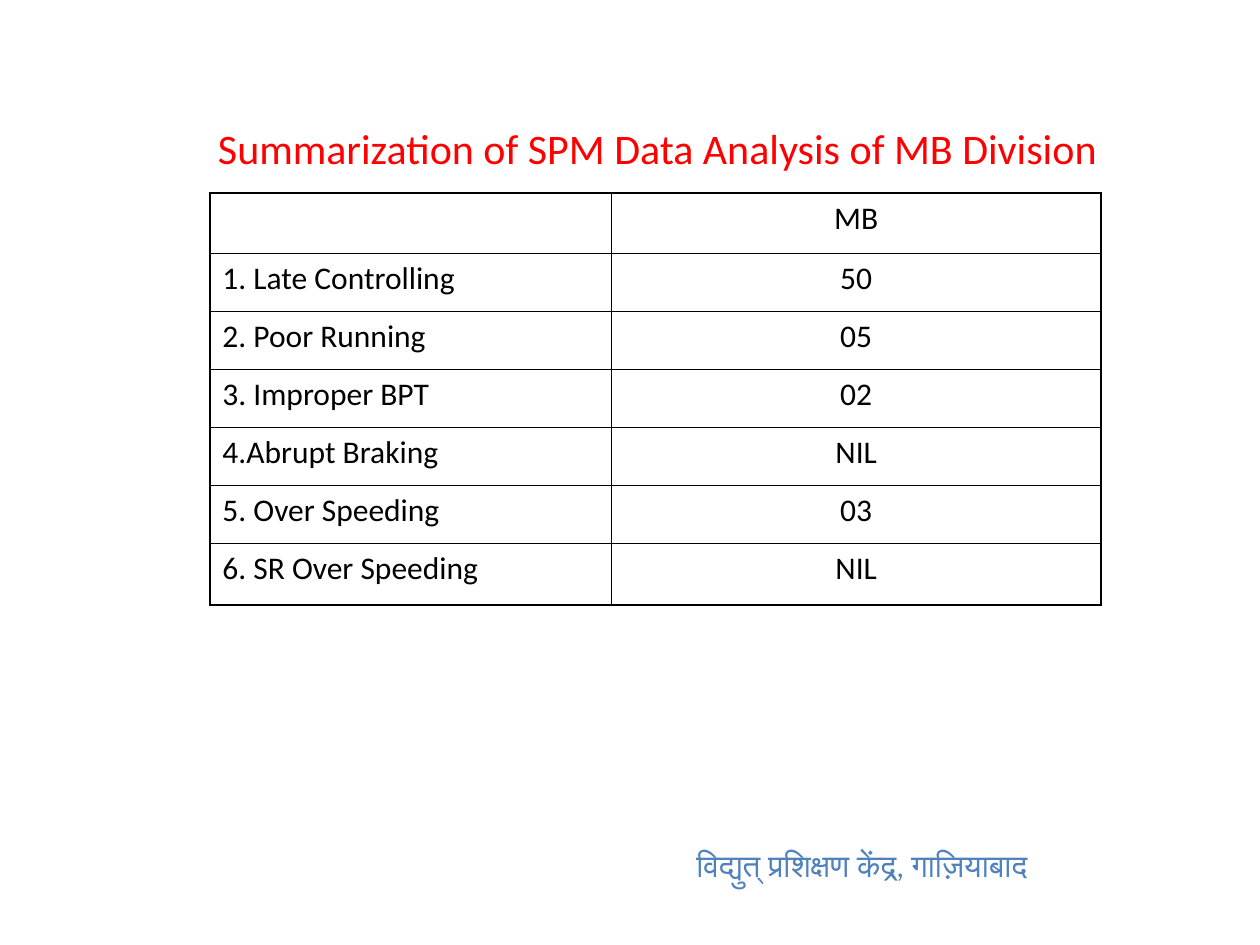
from dataclasses import dataclass

from lxml.etree import SubElement
from pptx import Presentation
from pptx.dml.color import RGBColor
from pptx.enum.text import MSO_ANCHOR, MSO_AUTO_SIZE, PP_ALIGN
from pptx.oxml.ns import qn
from pptx.util import Cm, Pt


@dataclass(frozen=True)
class Theme:
    font: str = "Calibri"
    title_size: Pt = Pt(24)
    body_size: Pt = Pt(18)
    title: RGBColor = RGBColor(0xFF, 0x00, 0x00)
    body: RGBColor = RGBColor(0x00, 0x00, 0x00)
    footer: RGBColor = RGBColor(0x4F, 0x81, 0xBD)
    border: str = "000000"
    border_width: Pt = Pt(1)


THEME = Theme()


def format_paragraph(paragraph, size, color, alignment=PP_ALIGN.LEFT):
    paragraph.alignment = alignment
    paragraph.font.name = THEME.font
    paragraph.font.size = size
    paragraph.font.color.rgb = color


def outline_cell(cell):
    """Draw all four borders; call before any fill is set, as borders come first."""
    properties = cell._tc.get_or_add_tcPr()
    for side in ("a:lnL", "a:lnR", "a:lnT", "a:lnB"):
        line = SubElement(properties, qn(side), w=str(THEME.border_width))
        fill = SubElement(line, qn("a:solidFill"))
        SubElement(fill, qn("a:srgbClr"), val=THEME.border)


presentation = Presentation()
presentation.slide_width = Cm(25.4)
presentation.slide_height = Cm(19.05)
slide = presentation.slides.add_slide(presentation.slide_layouts[5])

# Title
title = slide.shapes.title
title.left, title.top, title.width, title.height = Cm(4.14), Cm(2.34), Cm(18.6), Cm(1.27)
title.text_frame.text = "Summarization of SPM Data Analysis of MB Division"
title.text_frame.auto_size = MSO_AUTO_SIZE.NONE
title.text_frame.vertical_anchor = MSO_ANCHOR.TOP
format_paragraph(title.text_frame.paragraphs[0], THEME.title_size, THEME.title)

# Summary table
findings = [
    ("", "MB"),
    ("1. Late Controlling", "50"),
    ("2. Poor Running", "05"),
    ("3. Improper BPT", "02"),
    ("4.Abrupt Braking", "NIL"),
    ("5. Over Speeding", "03"),
    ("6. SR Over Speeding", "NIL"),
]
column_widths = [Cm(8.1), Cm(9.86)]
row_heights = [Cm(1.22)] + [Cm(1.17)] * 5 + [Cm(1.24)]
alignments = [PP_ALIGN.LEFT, PP_ALIGN.CENTER]

summary = slide.shapes.add_table(
    len(findings), len(column_widths), Cm(4.23), Cm(3.89), sum(column_widths), sum(row_heights)
).table
summary.first_row = False
summary.horz_banding = False
for column, width in zip(summary.columns, column_widths):
    column.width = width
for row, height, finding in zip(summary.rows, row_heights, findings):
    row.height = height
    for cell, wording, alignment in zip(row.cells, finding, alignments):
        cell.text = wording
        format_paragraph(cell.text_frame.paragraphs[0], THEME.body_size, THEME.body, alignment)
        outline_cell(cell)
        cell.fill.background()

# Training centre footer
training_centre = slide.shapes.add_textbox(Cm(13.79), Cm(16.94), Cm(8.64), Cm(1.02))
training_centre.text_frame.word_wrap = True
training_centre.text_frame.text = "विद्युत् प्रशिक्षण केंद्र, गाज़ियाबाद"
format_paragraph(training_centre.text_frame.paragraphs[0], THEME.body_size, THEME.footer)

presentation.save("out.pptx")
